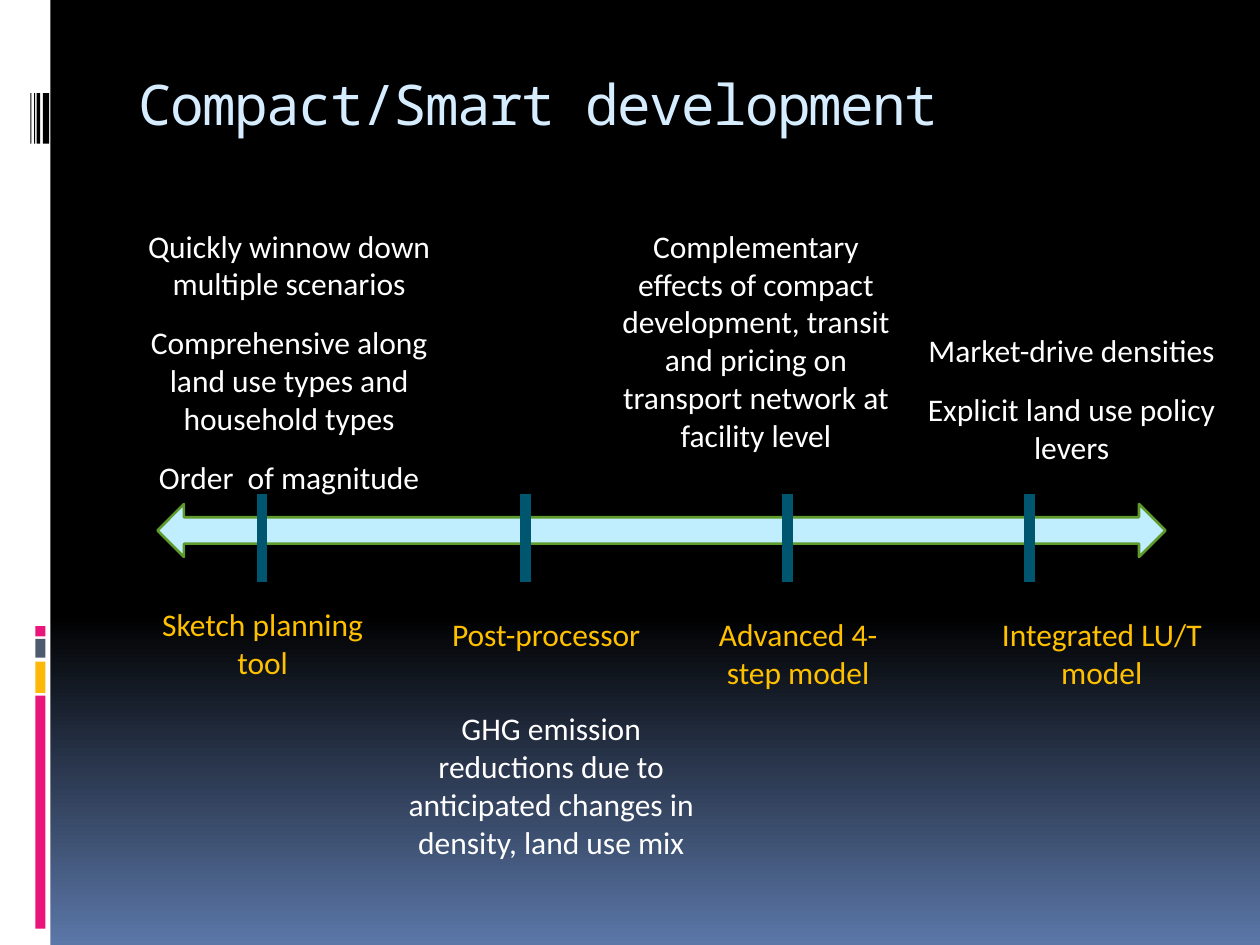
from lxml.etree import SubElement as Sub
from pptx import Presentation
from pptx.dml.color import RGBColor as RGB
from pptx.enum.shapes import MSO_CONNECTOR as Con, MSO_SHAPE as Geo
from pptx.enum.text import MSO_ANCHOR as Anchor, MSO_AUTO_SIZE as Auto, PP_ALIGN as Align
from pptx.oxml.ns import qn
from pptx.util import Inches, Pt

HUE = {
    "black": "000000", "white": "FFFFFF", "blue": "5B77A8", "pink": "EA157A",
    "gold": "FEB80A", "slate": "4E5B6F", "pale": "D6ECFF", "sky": "C1EEFF",
    "green": "5E9B2C", "teal": "00566E", "amber": "FFC000",
}


class Deck:
    """Holds the style and the current slide, and draws each kind of element."""

    def __init__(self):
        self.prs = Presentation()
        self.prs.slide_width, self.prs.slide_height = Inches(10), Inches(7.5)
        self.slide = self.prs.slides.add_slide(self.prs.slide_layouts[5])
        self.shapes = self.slide.shapes
        self.font, self.mono, self.size = "Calibri", "Noto Sans Mono", 18

    def tint(self, name):
        return RGB.from_string(HUE[name])

    def style(self, para, font, size, hue, align):
        para.alignment = align
        para.font.name, para.font.size = font, Pt(size)
        para.font.color.rgb = self.tint(hue)

    def back(self, top, base, start):
        fill = self.slide.background.fill
        fill.gradient()
        fill.gradient_angle = 270
        for stop, hue, pos in zip(fill.gradient_stops, (top, base), (start, 1)):
            stop.color.rgb, stop.position = self.tint(hue), pos

    def title(self, text, *box):
        head = self.shapes.title
        head.left, head.top, head.width, head.height = map(Inches, box)
        frame = head.text_frame
        frame.text, frame.auto_size = text, Auto.NONE
        frame.vertical_anchor = Anchor.TOP
        para = frame.paragraphs[0]
        self.style(para, self.mono, 32, "pale", Align.LEFT)
        para.runs[0]._r.get_or_add_rPr().set("spc", "-100")

    def shape(self, geo, hue, *box, edge=None):
        item = self.shapes.add_shape(geo, *map(Inches, box))
        item.shadow.inherit = False
        item.fill.solid()
        item.fill.fore_color.rgb = self.tint(hue)
        if edge:
            item.line.color.rgb, item.line.width = self.tint(edge), Pt(1.5)
        else:
            item.line.fill.background()

    def tick(self, x, top, end):
        line = self.shapes.add_connector(Con.STRAIGHT, *map(Inches, (x, top, x, end)))
        line.line.color.rgb, line.line.width = self.tint("teal"), Pt(6)
        Sub(line._element.spPr, qn("a:effectLst"))

    def text(self, hue, lines, *box):
        frame = self.shapes.add_textbox(*map(Inches, box)).text_frame
        frame.word_wrap, frame.auto_size = True, Auto.SHAPE_TO_FIT_TEXT
        frame.text = "\n".join(lines)
        for para in frame.paragraphs:
            self.style(para, self.font, self.size, hue, Align.CENTER)
        for para in frame.paragraphs[:-1]:
            para.space_after = Pt(12)


def main():
    deck = Deck()
    deck.back("black", "blue", 0.65)
    deck.shape(Geo.RECTANGLE, "white", 0, 0, 0.4, 7.5)
    for hue, top, high in (("pink", 5.52, 1.85), ("gold", 5.25, 0.25),
                           ("slate", 5.07, 0.15), ("pink", 4.97, 0.08)):
        deck.shape(Geo.RECTANGLE, hue, 0.28, top, 0.08, high)
    for left, wide in ((0.34, 0.05), (0.29, 0.03), (0.27, 0.01), (0.24, 0.01)):
        deck.shape(Geo.RECTANGLE, "black", left, 0.74, wide, 0.4)

    deck.title("Compact/Smart development", 1, 0.5, 8.5, 0.77)
    deck.shape(Geo.LEFT_RIGHT_ARROW, "sky", 1.25, 4, 8, 0.42, edge="green")

    for x, label, left, top, high in (
            (2.08, "Sketch planning tool", 1.17, 4.75, 0.71),
            (4.17, "Post-processor", 3.42, 4.83, 0.4),
            (6.25, "Advanced 4-step model", 5.42, 4.83, 0.71),
            (8.17, "Integrated LU/T model", 7.83, 4.83, 0.71)):
        deck.tick(x, 3.92, 4.62)
        deck.text("amber", [label], left, top, 1.83, high)

    deck.text("white", ["Quickly winnow down multiple scenarios",
                        "Comprehensive along land use types and household types",
                        "Order  of magnitude"], 0.92, 1.75, 2.75, 2.26)
    deck.text("white", ["Complementary effects of compact development, transit and "
                        "pricing on transport network at facility level"],
              4.75, 1.75, 2.5, 1.92)
    deck.text("white", ["Market-drive densities", "Explicit land use policy levers"],
              7.17, 2.58, 2.67, 1.18)
    deck.text("white", ["GHG emission reductions due to anticipated changes in "
                        "density, land use mix"], 3, 5.58, 2.75, 1.31)
    deck.prs.save("out.pptx")


if __name__ == "__main__":
    main()
